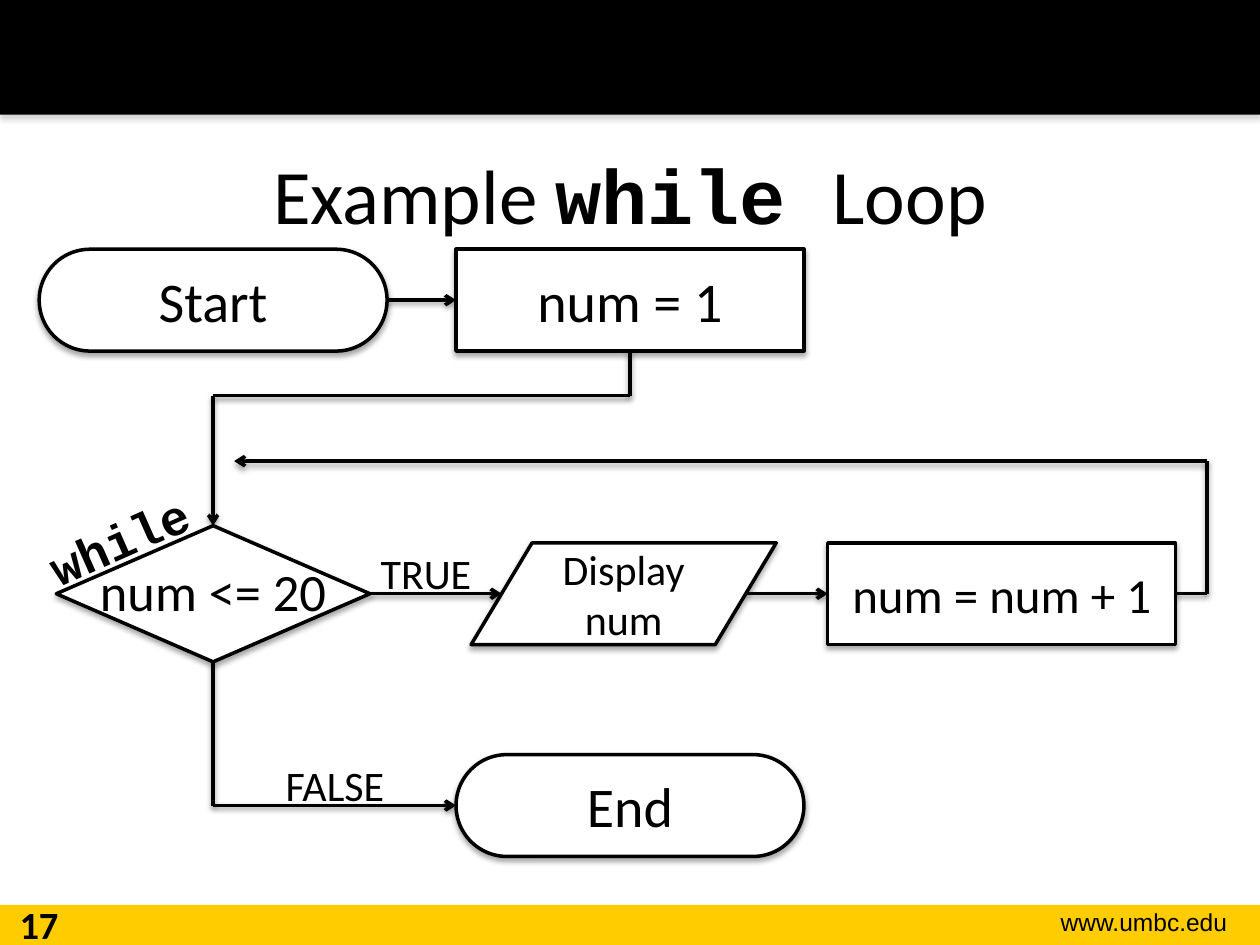
from lxml.etree import SubElement
from pptx import Presentation
from pptx.dml.color import RGBColor
from pptx.enum.shapes import MSO_CONNECTOR, MSO_SHAPE
from pptx.enum.text import MSO_ANCHOR, PP_ALIGN
from pptx.oxml.ns import qn
from pptx.util import Pt

COLORS = {"black": "000000", "white": "FFFFFF", "gold": "FFCC00", "gray": "808080"}
BODY, CODE = "Calibri", "Courier New"
TOP, LEFT, BOTTOM, RIGHT = range(4)


def color(name):
    return RGBColor.from_string(COLORS[name])


def add_shadow(spPr, name="black", alpha=35, dist=1.8):
    effects = spPr.find(qn("a:effectLst"))
    if effects is None:
        effects = SubElement(spPr, qn("a:effectLst"))
    shadow = SubElement(effects, qn("a:outerShdw"), blurRad=str(Pt(3.1)),
                        dist=str(Pt(dist)), dir="5400000", rotWithShape="0")
    clr = SubElement(shadow, qn("a:srgbClr"), val=COLORS[name])
    SubElement(clr, qn("a:alpha"), val=str(alpha * 1000))


def style_run(r, size, font=BODY, bold=False):
    r.font.size, r.font.name, r.font.bold = Pt(size), font, bold
    r.font.color.rgb = color("black")


def write(tf, text, size, font=BODY, bold=False, align=PP_ALIGN.CENTER):
    tf.text = text
    p = tf.paragraphs[0]
    p.alignment = align
    style_run(p.runs[0], size, font, bold)


def add_text(slide, box, text, size, wrap=True, **style):
    s = slide.shapes.add_textbox(*map(Pt, box))
    s.text_frame.word_wrap = wrap
    write(s.text_frame, text, size, **style)
    return s


def add_bar(slide, box, fill):
    s = slide.shapes.add_shape(MSO_SHAPE.RECTANGLE, *map(Pt, box))
    s.shadow.inherit = False
    s.fill.solid()
    s.fill.fore_color.rgb = color(fill)
    s.line.fill.background()
    return s


def add_header(slide, box):
    add_shadow(add_bar(slide, box, "black")._element.spPr, "gray")


def add_footer(slide, box):
    x, y, w, h = box
    add_bar(slide, box, "gold")
    add_text(slide, (x + w - 154.8, y - 2, 143.2, 24.5), "www.umbc.edu", 14,
             font="Arial", align=PP_ALIGN.RIGHT)
    add_text(slide, (x, y - 5.8, 44.6, 28.8), "17", 22, bold=True)


def add_title(slide, box):
    s = slide.shapes.add_textbox(*map(Pt, box))
    tf = s.text_frame
    tf.word_wrap = True
    tf.vertical_anchor = MSO_ANCHOR.MIDDLE
    p = tf.paragraphs[0]
    p.alignment = PP_ALIGN.CENTER
    for text, font in (("Example ", BODY), ("while ", CODE), ("Loop", BODY)):
        r = p.add_run()
        r.text = text
        style_run(r, 44, font, font == CODE)


def add_step(slide, kind, center, text, size=32, width=198.8, height=58.2):
    cx, cy = center
    s = slide.shapes.add_shape(kind, Pt(cx - width / 2), Pt(cy - height / 2),
                               Pt(width), Pt(height))
    if kind == MSO_SHAPE.ROUNDED_RECTANGLE:
        s.adjustments[0] = 0.5
    s.shadow.inherit = False
    s.fill.solid()
    s.fill.fore_color.rgb = color("white")
    s.line.color.rgb = color("black")
    s.line.width = Pt(2)
    add_shadow(s._element.spPr)
    tf = s.text_frame
    tf.word_wrap = True
    tf.vertical_anchor = MSO_ANCHOR.MIDDLE
    write(tf, text, size)
    return s


def add_line(slide, start, end, arrow=False):
    """Each end is an (x, y) point or a (shape, side) joint."""
    joints = [isinstance(e[0], (int, float)) for e in (start, end)]
    points = [e if is_point else (0, 0) for e, is_point in zip((start, end), joints)]
    c = slide.shapes.add_connector(MSO_CONNECTOR.STRAIGHT,
                                   *(Pt(v) for point in points for v in point))
    if not joints[0]:
        c.begin_connect(*start)
    if not joints[1]:
        c.end_connect(*end)
    c.line.color.rgb = color("black")
    c.line.width = Pt(2)
    spPr = c._element.spPr
    if arrow:
        SubElement(spPr.find(qn("a:ln")), qn("a:tailEnd"), type="arrow")
    add_shadow(spPr, alpha=38, dist=1.6)


def add_flowchart(slide, box):
    x, y, w, h = box
    spine, middle, last, back = x + 99.8, x + 338, x + 550.4, x + w
    first_row, loop_row, end_row = y + 29.1, y + 196.9, y + h - 29.1
    turn, rejoin = y + 83.7, y + 121.1

    start = add_step(slide, MSO_SHAPE.ROUNDED_RECTANGLE, (spine, first_row), "Start")
    init = add_step(slide, MSO_SHAPE.RECTANGLE, (middle, first_row), "num = 1")
    test = add_step(slide, MSO_SHAPE.FLOWCHART_DECISION, (spine, loop_row),
                    "num <= 20", 30, 179.2, 77.8)
    test.text_frame.word_wrap = False
    test.text_frame.margin_bottom = Pt(7.2)
    show_x, show_w = middle - 3.6, 174.4
    add_step(slide, MSO_SHAPE.FLOWCHART_DATA, (show_x, loop_row),
             "Display num", 24, show_w)
    count = add_step(slide, MSO_SHAPE.RECTANGLE, (last, loop_row), "num = num + 1", 28)
    end = add_step(slide, MSO_SHAPE.ROUNDED_RECTANGLE, (middle, end_row), "End")

    slant = 0.4 * show_w  # centre to the midpoint of a slanted side
    for begin, finish, arrow in (
        ((start, RIGHT), (init, LEFT), True),
        ((init, BOTTOM), (middle, turn), False),
        ((middle, turn), (spine, turn), False),
        ((spine, turn), (test, TOP), True),
        ((test, RIGHT), (show_x - slant, loop_row), True),
        ((show_x + slant, loop_row), (count, LEFT), True),
        ((count, RIGHT), (back, loop_row), False),
        ((back, loop_row), (back, rejoin), False),
        ((back, rejoin), (spine + 12, rejoin), True),
        ((test, BOTTOM), (spine, end_row), False),
        ((spine, end_row), (end, LEFT), True),
    ):
        add_line(slide, begin, finish, arrow)

    add_text(slide, (spine + 64, loop_row - 29.7, 115.2, 36), "TRUE", 24)
    add_text(slide, (spine + 12, end_row - 29.7, 115.2, 36), "FALSE", 24)
    label = add_text(slide, (spine - 103, loop_row - 51.3, 98.6, 41), "while", 28,
                     wrap=False, font=CODE, bold=True, align=PP_ALIGN.LEFT)
    label.rotation = 336


def main():
    prs = Presentation()
    prs.slide_width, prs.slide_height = Pt(720), Pt(540)
    slide = prs.slides.add_slide(prs.slide_layouts[6])
    add_footer(slide, (0, 517, 720, 23))
    add_header(slide, (0, 0, 720, 65.5))
    add_title(slide, (36, 65.5, 648, 90))
    add_flowchart(slide, (22, 142.4, 667.8, 347))
    prs.save("out.pptx")


if __name__ == "__main__":
    main()
